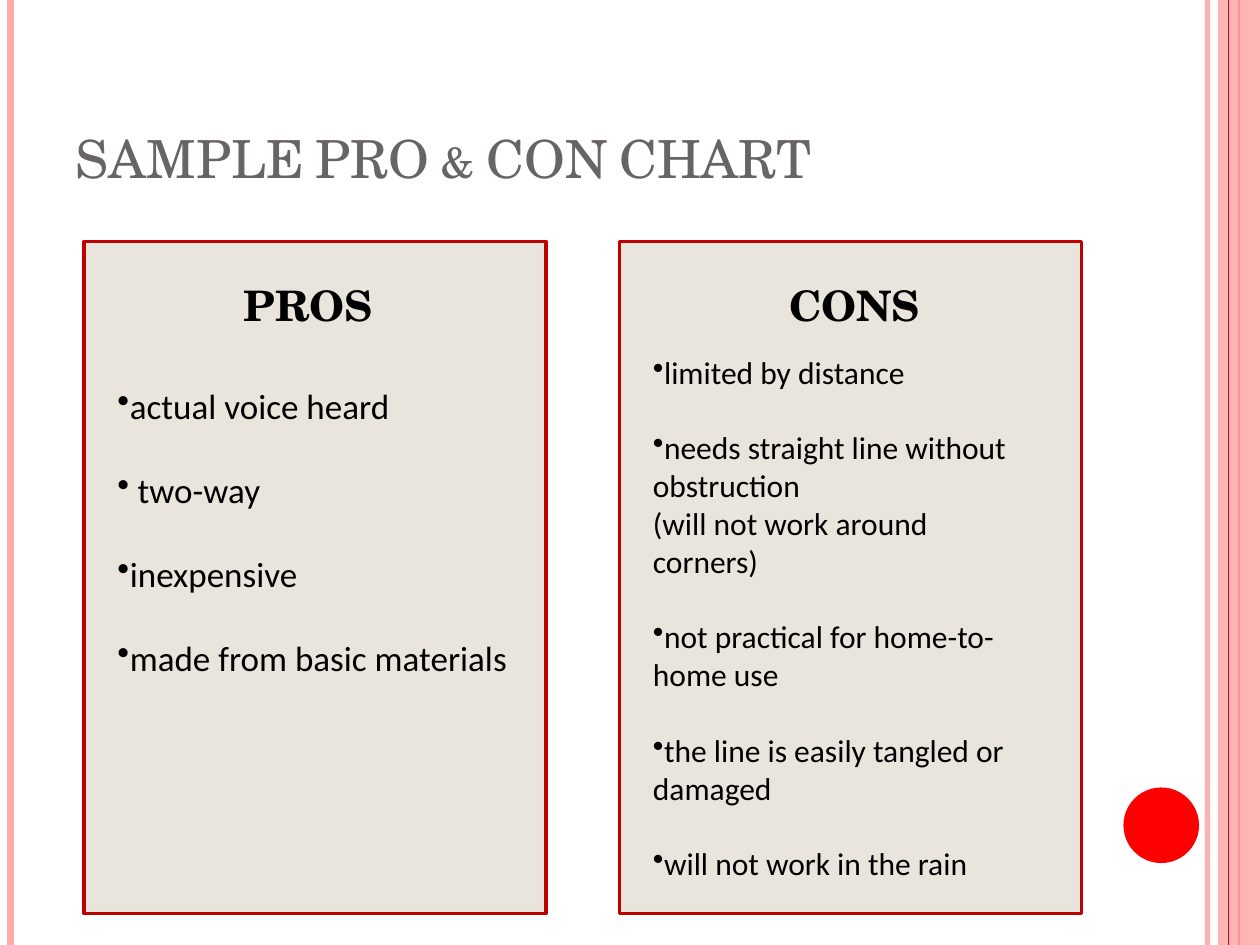
import pptx
import pptx.dml.color
import pptx.enum.shapes
import pptx.enum.text
import pptx.oxml.ns
import pptx.util
from lxml import etree

RGBColor = pptx.dml.color.RGBColor
PINK = RGBColor(0xFF, 0xAB, 0xAB)
RED = RGBColor(0xFF, 0x00, 0x00)
DARK_RED = RGBColor(0xBD, 0x00, 0x00)
BEIGE = RGBColor(0xE9, 0xE5, 0xDC)
GREY = RGBColor(0x69, 0x64, 0x64)
BLACK = RGBColor(0x00, 0x00, 0x00)
HEADING_FONT = "TeX Gyre Schola"
BODY_FONT = "Calibri"
COLUMNS, ROWS = 120, 90
SHAPES = pptx.enum.shapes.MSO_SHAPE
ANCHOR = pptx.enum.text.MSO_ANCHOR
AUTO_SIZE = pptx.enum.text.MSO_AUTO_SIZE


class SlideBuilder:
    def __init__(self, presentation):
        self.slide = presentation.slides.add_slide(presentation.slide_layouts[5])
        self.column = presentation.slide_width / COLUMNS
        self.row = presentation.slide_height / ROWS

    def box(self, left, top, width, height):
        return (round(left * self.column), round(top * self.row),
                round(width * self.column), round(height * self.row))

    def set_opacity(self, parent, percent):
        color = parent.find(".//" + pptx.oxml.ns.qn("a:srgbClr"))
        alpha = etree.SubElement(color, pptx.oxml.ns.qn("a:alpha"))
        alpha.set("val", str(percent * 1000))

    def add_run(self, paragraph, text, size, font, color, bold=False):
        run = paragraph.add_run()
        run.text = text
        run.font.size = pptx.util.Pt(size)
        run.font.name = font
        run.font.color.rgb = color
        run.font.bold = bold
        return run

    def title(self, text, *area):
        shape = self.slide.shapes.title
        shape.left, shape.top, shape.width, shape.height = self.box(*area)
        frame = shape.text_frame
        frame.auto_size = AUTO_SIZE.NONE
        frame.vertical_anchor = ANCHOR.BOTTOM
        paragraph = frame.paragraphs[0]
        paragraph.alignment = pptx.enum.text.PP_ALIGN.LEFT
        run = self.add_run(paragraph, text, 30, HEADING_FONT, GREY)
        run.font._element.set("cap", "small")

    def stripe(self, column, color, width, opacity=100):
        left, top, _, bottom = self.box(column, 0, 0, ROWS)
        line = self.slide.shapes.add_connector(
            pptx.enum.shapes.MSO_CONNECTOR.STRAIGHT, left, top, left, bottom)
        line.line.color.rgb = color
        line.line.width = pptx.util.Pt(width)
        properties = line._element.spPr
        if opacity < 100:
            self.set_opacity(properties, opacity)
        etree.SubElement(properties, pptx.oxml.ns.qn("a:effectLst"))

    def shape(self, kind, area, fill, line=None, opacity=100):
        shape = self.slide.shapes.add_shape(kind, *self.box(*area))
        shape.shadow.inherit = False
        shape.fill.solid()
        shape.fill.fore_color.rgb = fill
        if opacity < 100:
            self.set_opacity(shape._element.spPr, opacity)
        if line is None:
            shape.line.fill.background()
        else:
            shape.line.color.rgb = line
            shape.line.width = pptx.util.Pt(2)

    def text_frame(self, area):
        frame = self.slide.shapes.add_textbox(*self.box(*area)).text_frame
        frame.word_wrap = True
        frame.auto_size = AUTO_SIZE.SHAPE_TO_FIT_TEXT
        return frame

    def heading(self, text, *area):
        paragraph = self.text_frame(area).paragraphs[0]
        self.add_run(paragraph, text, 24, HEADING_FONT, BLACK, bold=True)

    def bullets(self, items, size, gap, *area):
        frame = self.text_frame(area)
        for index, (first_line, *more_lines) in enumerate(items):
            paragraph = frame.add_paragraph() if index else frame.paragraphs[0]
            if index:
                paragraph.space_before = pptx.util.Pt(gap)
            bullet = etree.SubElement(
                paragraph._p.get_or_add_pPr(), pptx.oxml.ns.qn("a:buChar"))
            bullet.set("char", "•")
            self.add_run(paragraph, first_line, size, BODY_FONT, BLACK)
            for line in more_lines:
                self.add_run(frame.add_paragraph(), line, size, BODY_FONT, BLACK)


def main():
    presentation = pptx.Presentation()
    presentation.slide_width = pptx.util.Inches(10)
    presentation.slide_height = pptx.util.Inches(7.5)
    builder = SlideBuilder(presentation)

    builder.stripe(115, PINK, 3, opacity=93)
    builder.stripe(1, PINK, 4.5)
    builder.stripe(118, RED, 1.5)
    builder.shape(SHAPES.RECTANGLE, (116, 0, 4, ROWS), PINK, opacity=87)
    builder.stripe(117, RED, 0.75)
    builder.shape(SHAPES.OVAL, (107, 75, 7.2, 7.2), RED)

    builder.title("SAMPLE PRO & CON CHART", 6, 3.6, 98, 15)
    for left in (8, 59):
        builder.shape(SHAPES.RECTANGLE, (left, 23, 44, 64), BEIGE, line=DARK_RED)
    builder.heading("PROS", 22, 26, 22, 6)
    builder.heading("CONS", 74, 26, 15, 6)

    pros = [
        ["actual voice heard"],
        [" two-way"],
        ["inexpensive"],
        ["made from basic materials"],
    ]
    cons = [
        ["limited by distance"],
        ["needs straight line without obstruction", "(will not work around corners)"],
        ["not practical for home-to-home use"],
        ["the line is easily tangled or damaged"],
        ["will not work in the rain"],
    ]
    builder.bullets(pros, 20, 24, 10, 36, 40, 29.5)
    builder.bullets(cons, 18, 21.6, 61, 33, 38, 52)

    presentation.save("out.pptx")


if __name__ == "__main__":
    main()
